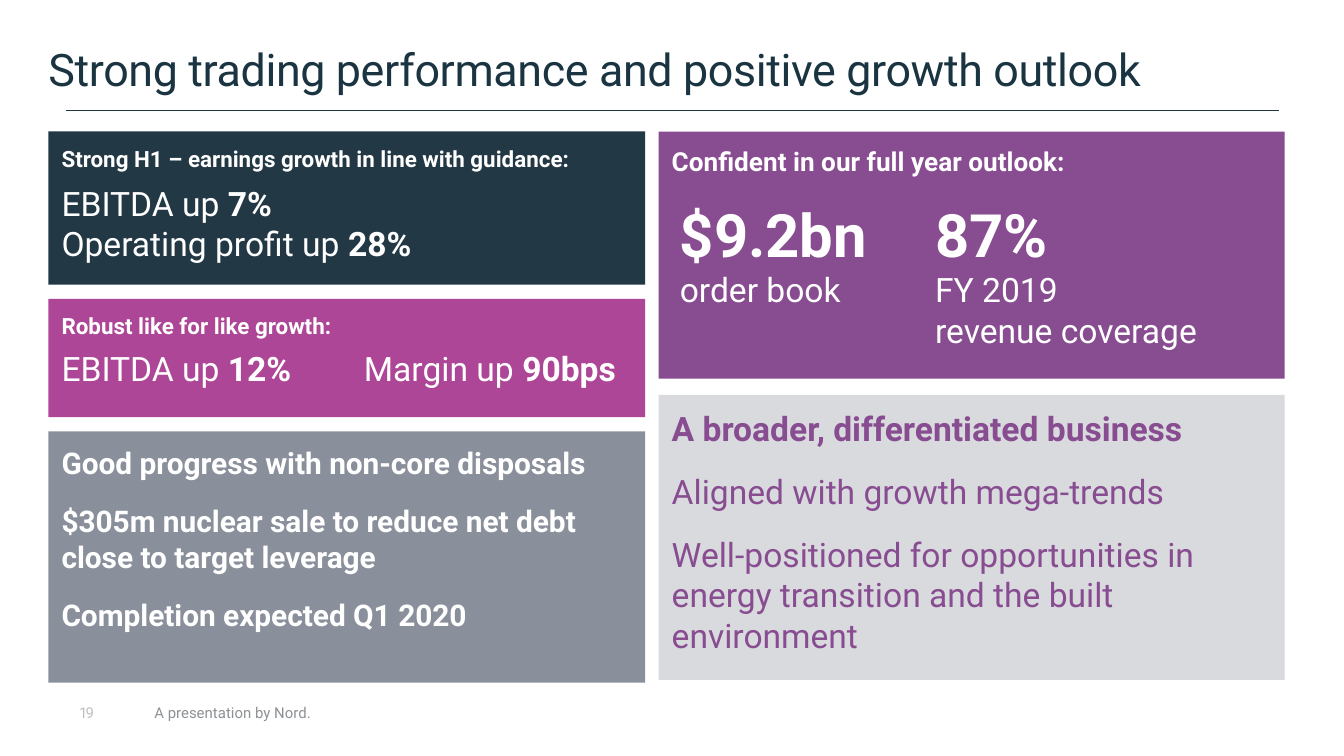
from dataclasses import dataclass

from lxml.etree import SubElement
from pptx import Presentation
from pptx.dml.color import RGBColor
from pptx.enum.shapes import MSO_CONNECTOR, MSO_SHAPE
from pptx.enum.text import MSO_ANCHOR, MSO_AUTO_SIZE, PP_ALIGN
from pptx.oxml.ns import qn
from pptx.util import Inches, Pt


@dataclass(frozen=True)
class Theme:
    font: str = "Roboto"
    ink: str = "1A3441"
    navy: str = "233845"
    purple: str = "884C91"
    magenta: str = "AD4696"
    slate: str = "8A909B"
    mist: str = "D9DADE"
    white: str = "FFFFFF"
    footer: str = "8D9194"
    number: str = "BFBFBF"
    title: int = 24
    figure: int = 32
    body: int = 18
    point: int = 16
    heading: int = 14
    label: int = 12
    small: int = 8


THEME = Theme()
WIDTH = Inches(10)
HEIGHT = WIDTH * 9 // 16
LEFT_COLUMN, RIGHT_COLUMN = (3.6, 44.4), (49, 46.6)
PANELS_TOP = 17.4


def across(share):
    return round(WIDTH * share / 100)


def down(share):
    return round(HEIGHT * share / 100)


def area(left, top, width, height):
    return across(left), down(top), across(width), down(height)


def stack(column, heights, gap):
    left, width = column
    top = PANELS_TOP
    for height in heights:
        yield left, top, width, height
        top += height + gap


def write(frame, *runs, size, color=THEME.white, bold=False, after=0,
          spacing=None, tab=None):
    paragraph = frame.paragraphs[0]
    if paragraph.runs:
        paragraph = frame.add_paragraph()
    paragraph.alignment = PP_ALIGN.LEFT
    paragraph.space_before = Pt(0)
    paragraph.space_after = Pt(after)
    if tab is not None:
        stops = SubElement(paragraph._p.get_or_add_pPr(), qn("a:tabLst"))
        SubElement(stops, qn("a:tab"), pos=str(across(tab)), algn="l")
    for index, words in enumerate(runs):
        for number, line in enumerate(words.split("\n")):
            if number:
                paragraph.add_line_break()
            if not line:
                continue
            run = paragraph.add_run()
            run.text = line
            run.font.name = THEME.font
            run.font.size = Pt(size)
            run.font.bold = bold or index % 2 == 1
            run.font.color.rgb = RGBColor.from_string(color)
            if spacing is not None:
                run.font._element.set("spc", str(spacing))


def add_title(slide, words):
    title = slide.shapes.title
    title.left, title.top, title.width, title.height = area(3.6, 3.73, 93, 8.89)
    frame = title.text_frame
    frame.auto_size = MSO_AUTO_SIZE.NONE
    frame.vertical_anchor = MSO_ANCHOR.BOTTOM
    frame.margin_left = frame.margin_right = 0
    frame.margin_top = frame.margin_bottom = 0
    write(frame, words, size=THEME.title, color=THEME.ink, spacing=-20)


def add_rule(slide):
    height = down(14.58)
    rule = slide.shapes.add_connector(
        MSO_CONNECTOR.STRAIGHT, across(4.9), height, across(95.2), height)
    rule.line.color.rgb = RGBColor.from_string(THEME.navy)
    rule.line.width = Pt(0.5)
    SubElement(rule._element.spPr, qn("a:effectLst"))


def add_panel(slide, cell, color):
    panel = slide.shapes.add_shape(MSO_SHAPE.RECTANGLE, *area(*cell))
    panel.shadow.inherit = False
    panel.fill.solid()
    panel.fill.fore_color.rgb = RGBColor.from_string(color)
    panel.line.fill.background()
    frame = panel.text_frame
    frame.word_wrap = True
    frame.vertical_anchor = MSO_ANCHOR.TOP
    frame.margin_left = frame.margin_right = Inches(0.1)
    frame.margin_top = frame.margin_bottom = Inches(0.1)
    return frame


def add_text(slide, cell, anchor=MSO_ANCHOR.TOP):
    frame = slide.shapes.add_textbox(*area(*cell)).text_frame
    frame.word_wrap = True
    frame.vertical_anchor = anchor
    return frame


def add_figure(slide, cell, figure, caption):
    frame = add_text(slide, cell)
    write(frame, figure, size=THEME.figure, bold=True)
    write(frame, caption, size=THEME.body)


def add_results(slide):
    earnings, growth, disposals = stack(LEFT_COLUMN, (20.27, 15.64, 33.24), 1.87)

    frame = add_panel(slide, earnings, THEME.navy)
    write(frame, "Strong H1 – earnings growth in line with guidance:",
          size=THEME.label, bold=True, after=6)
    write(frame, "EBITDA up ", "7%", "\nOperating profit up ", "28%",
          size=THEME.body, after=12)

    frame = add_panel(slide, growth, THEME.magenta)
    write(frame, "Robust like for like growth:",
          size=THEME.label, bold=True, after=4.5)
    write(frame, "EBITDA up ", "12%\t", "Margin up ", "90bps",
          size=THEME.body, after=4.5, tab=22.5)

    frame = add_panel(slide, disposals, THEME.slate)
    for words in ("Good progress with non-core disposals",
                  "$305m nuclear sale to reduce net debt close to target leverage",
                  "Completion expected Q1 2020"):
        write(frame, words, size=THEME.point, bold=True, after=12)


def add_outlook(slide):
    forecast, business = stack(RIGHT_COLUMN, (32.71, 37.69), 2.13)

    frame = add_panel(slide, forecast, THEME.purple)
    write(frame, "Confident in our full year outlook:",
          size=THEME.heading, bold=True)
    add_figure(slide, (49.6, 25.24, 17.5, 16.71), "$9.2bn", "order book")
    add_figure(slide, (68.6, 25.24, 27.2, 22.22), "87%",
               "FY 2019\nrevenue coverage")

    frame = add_panel(slide, business, THEME.mist)
    points = ("A broader, differentiated business",
              "Aligned with growth mega-trends",
              "Well-positioned for opportunities in energy transition "
              "and the built environment")
    for index, words in enumerate(points):
        write(frame, words, size=THEME.body, color=THEME.purple,
              bold=index == 0, after=12)


def add_footer(slide):
    number = add_text(slide, (4.9, 92.44, 5.6, 3.73), MSO_ANCHOR.MIDDLE)
    write(number, "19", size=THEME.small, color=THEME.number, spacing=-100)
    credit = add_text(slide, (10.5, 92.44, 14.7, 3.73), MSO_ANCHOR.MIDDLE)
    write(credit, "A presentation by Nord.", size=THEME.small,
          color=THEME.footer)


def main():
    presentation = Presentation()
    presentation.slide_width, presentation.slide_height = WIDTH, HEIGHT
    slide = presentation.slides.add_slide(presentation.slide_layouts[5])
    add_rule(slide)
    add_title(slide, "Strong trading performance and positive growth outlook")
    add_results(slide)
    add_outlook(slide)
    add_footer(slide)
    presentation.save("out.pptx")


if __name__ == "__main__":
    main()
